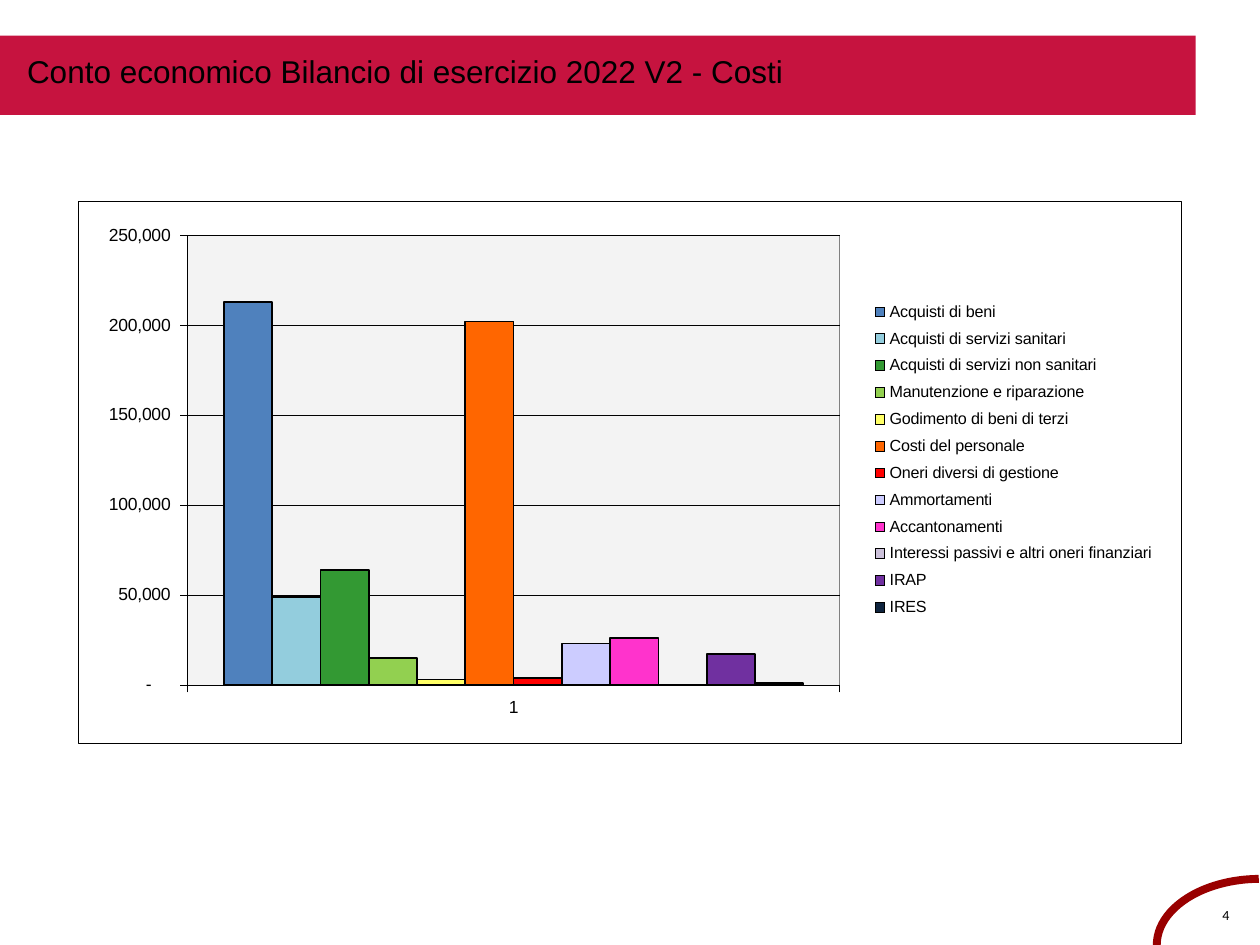
from lxml import etree
from pptx import Presentation
from pptx.chart.data import CategoryChartData
from pptx.dml.color import RGBColor
from pptx.enum import chart as kinds, shapes, text
from pptx.oxml import ns
from pptx.util import Pt

TITLE = "Conto economico Bilancio di esercizio 2022 V2 - Costi"
PAGE_NUMBER = "4"
COSTS = [
    ("Acquisti di beni", 213000, "4F81BD"),
    ("Acquisti di servizi sanitari", 49000, "93CDDD"),
    ("Acquisti di servizi non sanitari", 64000, "339933"),
    ("Manutenzione e riparazione", 15000, "92D050"),
    ("Godimento di beni di terzi", 3000, "FFFF66"),
    ("Costi del personale", 202000, "FF6600"),
    ("Oneri diversi di gestione", 4000, "FF0000"),
    ("Ammortamenti", 23000, "CCCCFF"),
    ("Accantonamenti", 26000, "FF33CC"),
    ("Interessi passivi e altri oneri finanziari", 0, "CCC1DA"),
    ("IRAP", 17000, "7030A0"),
    ("IRES", 1000, "0F243E"),
]
NUMBER_FORMAT = '_-* #,##0_-;\\-* #,##0_-;_-* "-"??_-;_-@_'
# Shares of the chart's width and height
PLOT_AREA = {"x": 0.099, "y": 0.063, "w": 0.591, "h": 0.829}
LEGEND_AREA = {"x": 0.715, "y": 0.172, "w": 0.265, "h": 0.61}
COLOURS = {"ink": "000000", "band": "C6133F", "arc": "990000",
           "paper": "FFFFFF", "plot": "C0C0C0", "edge": "808080"}


def colour(name):
    return RGBColor.from_string(COLOURS[name])


def set_font(font, size, name="Arial"):
    font.size, font.name = Pt(size), name
    font.bold = False
    font.color.rgb = colour("ink")


def set_line(line, width, name="ink"):
    line.color.rgb = colour(name)
    line.width = Pt(width)


def add_text(page, words, at, size, font="Arial", align=text.PP_ALIGN.LEFT,
             margins=(7.2, 3.6, 7.2, 3.6), spacing=1.0):
    box = page.shapes.add_textbox(*map(Pt, at))
    frame = box.text_frame
    frame.word_wrap = True
    (frame.margin_left, frame.margin_top,
     frame.margin_right, frame.margin_bottom) = map(Pt, margins)
    para = frame.paragraphs[0]
    para.alignment, para.line_spacing = align, spacing
    span = para.add_run()
    span.text = words
    set_font(span.font, size, font)
    return box


def area_format(fill, line, alpha=100):
    """Fill and outline for a chart part that has no public format."""
    return etree.fromstring(
        f'<c:spPr {ns.nsdecls("c", "a")}><a:solidFill><a:srgbClr val="{COLOURS[fill]}">'
        f'<a:alpha val="{alpha * 1000}"/></a:srgbClr></a:solidFill>'
        f'<a:ln w="{Pt(0.25)}"><a:solidFill><a:srgbClr val="{COLOURS[line]}"/>'
        '</a:solidFill></a:ln></c:spPr>')


def manual_layout(area, target=""):
    modes = "".join(f'<c:{side}Mode val="edge"/>' for side in "xy")
    sizes = "".join(f'<c:{side} val="{share}"/>' for side, share in area.items())
    return etree.fromstring(
        f'<c:layout {ns.nsdecls("c")}><c:manualLayout>{target}'
        f'{modes}{sizes}</c:manualLayout></c:layout>')


def replace_layout(part, layout, index):
    for old in part.findall(ns.qn("c:layout")):
        part.remove(old)
    part.insert(index, layout)


def add_cost_chart(page, at):
    data = CategoryChartData()
    data.categories = ["1"]
    for name, value, _ in COSTS:
        data.add_series(name, [value])
    chart = page.shapes.add_chart(
        kinds.XL_CHART_TYPE.COLUMN_CLUSTERED, *map(Pt, at), data).chart
    chart.has_title = False
    set_font(chart.font, 10)

    # Columns
    plot = chart.plots[0]
    plot.gap_width, plot.overlap = 150, 0
    plot.vary_by_categories = False
    for series, (_, _, fill) in zip(plot.series, COSTS):
        series.format.fill.solid()
        series.format.fill.fore_color.rgb = RGBColor.from_string(fill)
        set_line(series.format.line, 1)

    # Axes
    for axis in (chart.category_axis, chart.value_axis):
        axis.major_tick_mark = kinds.XL_TICK_MARK.OUTSIDE
        set_font(axis.tick_labels.font, 10)
        set_line(axis.format.line, 0.25)
    values = chart.value_axis
    values.minimum_scale, values.maximum_scale, values.major_unit = 0, 250000, 50000
    values.tick_labels.number_format = NUMBER_FORMAT
    values.tick_labels.number_format_is_linked = False
    set_line(values.major_gridlines.format.line, 0.25)

    # Legend
    chart.has_legend = True
    chart.legend.position = kinds.XL_LEGEND_POSITION.RIGHT
    chart.legend.include_in_layout = False
    set_font(chart.legend.font, 9.2)

    # Plot area, legend area and frame
    body = chart.element.find(ns.qn("c:chart"))
    area = body.find(ns.qn("c:plotArea"))
    replace_layout(area, manual_layout(PLOT_AREA, '<c:layoutTarget val="inner"/>'), 0)
    replace_layout(body.find(ns.qn("c:legend")), manual_layout(LEGEND_AREA), 1)
    area.append(area_format("plot", "edge", alpha=19))
    body.addnext(area_format("paper", "ink"))


def main():
    deck = Presentation()
    deck.slide_width, deck.slide_height = Pt(720), Pt(540)
    page = deck.slides.add_slide(deck.slide_layouts[6])

    # Corner arc and page number
    arc = page.shapes.add_shape(
        shapes.MSO_SHAPE.ARC, Pt(682.2), Pt(481), Pt(75.6), Pt(118))
    arc.shadow.inherit = False
    arc.rotation = 270
    arc.adjustments[0], arc.adjustments[1] = 162, 215.34
    arc.fill.background()
    set_line(arc.line, 4.5, "arc")
    add_text(page, PAGE_NUMBER, (689, 516.6, 23, 11.5), 8, font="Calibri",
             align=text.PP_ALIGN.CENTER, margins=(0, 2.2, 0, 0), spacing=0.93)

    # Title band
    band = page.shapes.add_shape(
        shapes.MSO_SHAPE.RECTANGLE, Pt(0), Pt(20.4), Pt(683.2), Pt(45.2))
    band.shadow.inherit = False
    band.fill.solid()
    band.fill.fore_color.rgb = colour("band")
    band.line.fill.background()
    add_text(page, TITLE, (8.4, 26, 459.5, 51), 18)

    add_cost_chart(page, (44.7, 114.7, 630.6, 310.4))
    deck.save("out.pptx")


if __name__ == "__main__":
    main()
